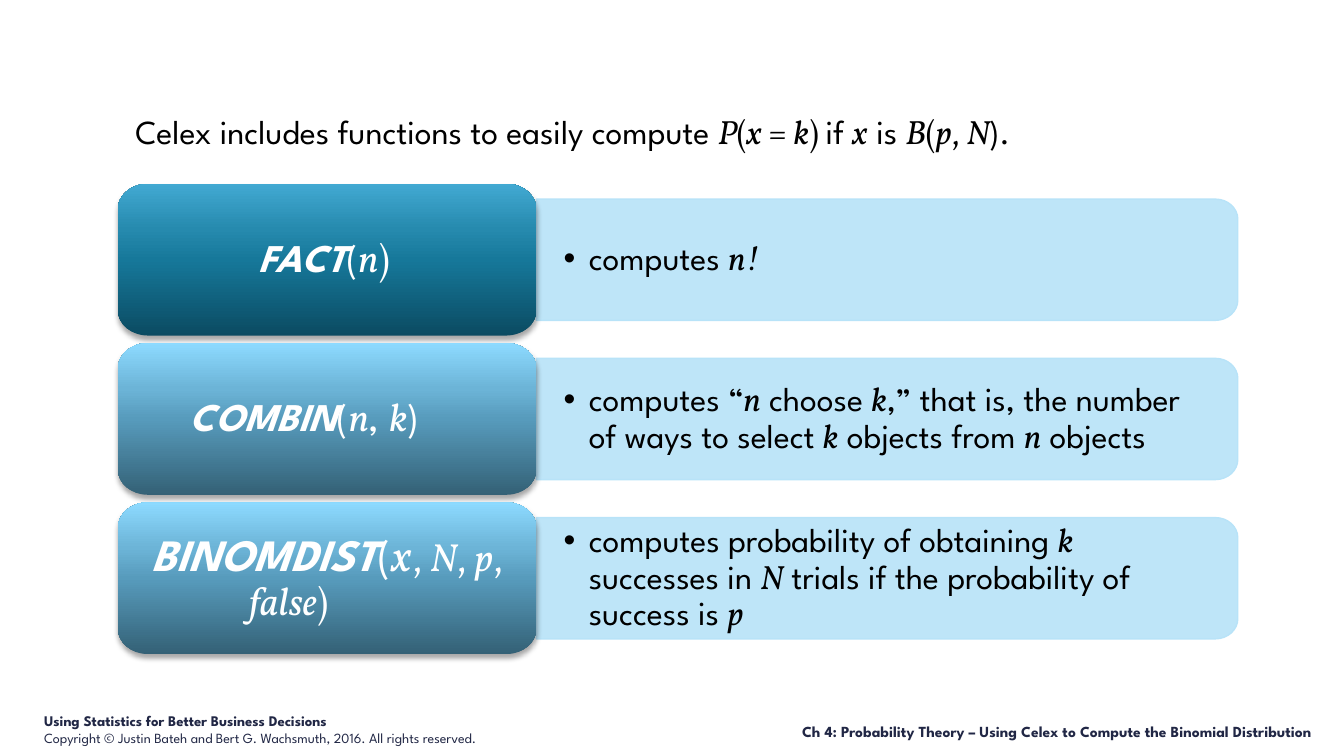
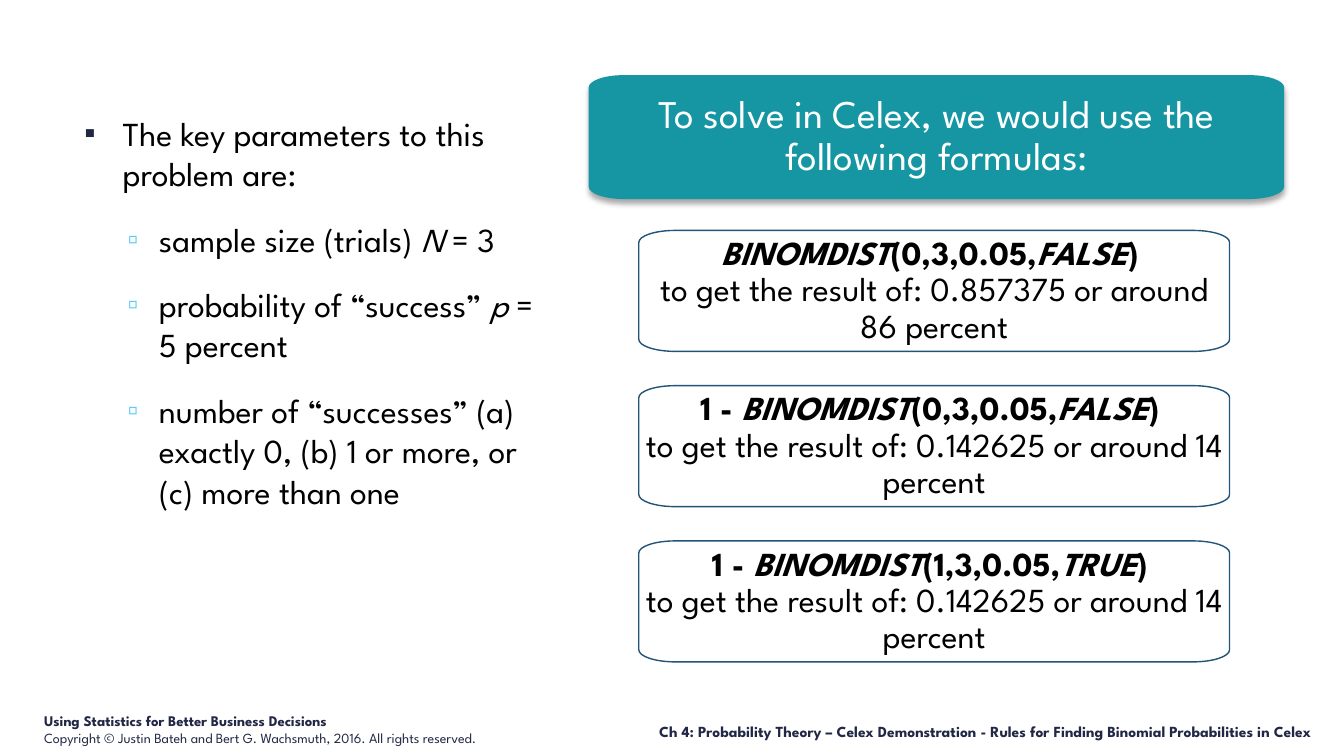
"""Build two slides on computing binomial probabilities with spreadsheet functions."""
from lxml import etree
from pptx import Presentation
from pptx.dml.color import RGBColor
from pptx.enum.text import MSO_ANCHOR, PP_ALIGN
from pptx.oxml.ns import qn
from pptx.util import Pt

LEFT, CENTER, RIGHT = PP_ALIGN.LEFT, PP_ALIGN.CENTER, PP_ALIGN.RIGHT
TOP, MIDDLE, BOTTOM = MSO_ANCHOR.TOP, MSO_ANCHOR.MIDDLE, MSO_ANCHOR.BOTTOM


class Theme:
    """Colours, fonts and type sizes."""
    sans, serif, bullets = "League Spartan", "Vollkorn", "Arial"
    ink, white, navy, sky = "000000", "FFFFFF", "212745", "5ECCF3"
    teal, outline = "1696A3", "225479"
    panel, panel_line = "BEE5F8", "B8E3F8"
    deep = [(0, "0B4B62"), (50, "16789A"), (70, "268AAE"), (100, "42A9D2")]
    light = [(0, "346176"), (50, "579BBC"), (70, "6CB4D7"), (100, "8DDAFF")]
    body, label, large = 24, 28, 32
    book, copyright, chapter = 10.5, 10, 11


# Run flags: b bold, i italic, v serif, + large
BOOK = [("Using Statistics for Better Business Decisions", "b")]
COPYRIGHT = [("Copyright\u00a0©\u00a0Justin Bateh and Bert G. Wachsmuth, 2016.\u00a0All\u00a0rights\u00a0reserved.", "")]
CHAPTERS = [
    ("Ch 4: Probability Theory – Using Celex to Compute the Binomial Distribution", 450),
    ("Ch 4: Probability Theory – Celex Demonstration - Rules for Finding Binomial Probabilities in Celex", 420.5),
]
INTRO = [("Celex includes functions to easily compute ", ""), ("P", "vi"), ("(", "v"), ("x ", "vi"),
         ("= ", "v"), ("k", "vi"), (") ", "v"), ("if ", ""), ("x", "vi"), (" is ", ""), ("B", "vi"),
         ("(", "v"), ("p", "vi"), (", ", "v"), ("N", "vi"), (").", "")]
FUNCTIONS = [
    (Theme.deep, 98,
     [("FACT", "bi"), ("(", ""), ("n", "vi"), (")\t", "v")],
     [("computes ", ""), ("n!", "vi")]),
    (Theme.light, 98,
     [("COMBIN", "bi"), ("(", ""), ("n", "vi"), (", ", ""), ("k", "vi"), (")\t", "")],
     [("computes “", ""), ("n", "vi"), (" choose ", ""), ("k", "vi"),
      (",” that is, the number of ways to select ", ""), ("k", "vi"),
      (" objects from ", ""), ("n", "vi"), (" objects", "")]),
    (Theme.light, 112,
     [("BINOMDIST", "bi+"), ("(", "+"), ("x", "vi+"), (", ", "v"), ("N", "vi"), (", ", "v"),
      ("p", "vi"), (", ", "v"), ("false", "vi"), (")\t", "v")],
     [("computes probability of obtaining ", ""), ("k", "vi"), (" successes in ", ""), ("N", "vi"),
      (" trials if the probability of success is ", ""), ("p", "vi")]),
]
PARAMETERS = [
    (0, [("The key parameters to this problem are:", "")]),
    (1, [("sample size (trials) ", ""), ("N ", "i"), ("= 3", "")]),
    (1, [("probability of “success” ", ""), ("p ", "i"), ("= 5 percent", "")]),
    (1, [("number of “successes” (a) exactly 0, (b) 1 or more, or (c) more than one", "")]),
]
LEVELS = [
    dict(indent=(32.4, -27.4), bullet=("▪", Theme.navy, 95)),
    dict(indent=(58.3, -22.3), bullet=("▫", Theme.sky, 90)),
]
BANNER = [("To solve in Celex, we would use the following formulas:", "")]
FORMULAS = [
    ("", "(0,3,0.05,", "FALSE", "0.857375 or around 86 percent"),
    ("1 - ", "(0,3,0.05,", "FALSE", "0.142625 or around 14 percent"),
    ("1 - ", "(1,3,0.05,", "TRUE", "0.142625 or around 14 percent"),
]


def rgb(color):
    """Turn a hex string into a colour."""
    return RGBColor.from_string(color)


def child(parent, tag, **attrs):
    """Append a drawing element."""
    el = etree.SubElement(parent, qn("a:" + tag))
    for name, value in attrs.items():
        el.set(name, str(value))
    return el


def set_frame(shape, insets, anchor):
    """Prepare a shape's text frame."""
    tf = shape.text_frame
    tf.word_wrap = True
    tf.vertical_anchor = anchor
    tf.margin_left, tf.margin_top, tf.margin_right, tf.margin_bottom = map(Pt, insets)
    return tf


def add_text(tf, runs, size, color=Theme.ink, align=LEFT, first=True, level=0,
             indent=None, spacing=None, before=0, after=0, bullet=None, tab=None):
    """Write one paragraph run by run."""
    p = tf.paragraphs[0] if first else tf.add_paragraph()
    p.alignment, p.level = align, level
    p.space_before, p.space_after = Pt(before), Pt(after)
    if spacing:
        p.line_spacing = spacing
    pPr = p._p.get_or_add_pPr()
    if indent:
        pPr.set("marL", str(Pt(indent[0])))
        pPr.set("indent", str(Pt(indent[1])))
    if tab:
        pPr.set("defTabSz", str(Pt(tab)))
    if bullet:
        char, tint, percent = bullet
        child(child(pPr, "buClr"), "srgbClr", val=tint)
        child(pPr, "buSzPct", val=percent * 1000)
        child(pPr, "buFont", typeface=Theme.bullets)
        child(pPr, "buChar", char=char)
    for text, flags in runs:
        r = p.add_run()
        r.text = text
        r.font.name = Theme.serif if "v" in flags else Theme.sans
        r.font.size = Pt(Theme.large if "+" in flags else size)
        r.font.bold, r.font.italic = "b" in flags, "i" in flags
        r.font.color.rgb = rgb(color)


def add_box(s, x, y, w, h, anchor=TOP):
    """Add a text box and return its frame."""
    return set_frame(s.shapes.add_textbox(Pt(x), Pt(y), Pt(w), Pt(h)), (7.2, 3.6, 7.2, 3.6), anchor)


def add_card(s, x, y, w, h, rx, ry, insets, fill, line=None, shadow=False, square_left=False):
    """Draw a card with elliptical corners and return its text frame."""
    outline, curves = [], {}
    for cx, cy, dx, dy in [(w, 0, -1, 1), (w, h, -1, -1), (0, h, 1, -1), (0, 0, 1, 1)]:
        if square_left and cx == 0:
            outline.append((cx, cy))
            continue
        ends = [(cx + dx * rx, cy), (cx, cy + dy * ry)]
        if dx != dy:
            a, b = ends
        else:
            b, a = ends
        curves[len(outline) + 1] = [(px + 0.55 * (cx - px), py + 0.55 * (cy - py)) for px, py in (a, b)]
        outline += [a, b]
    points = [(Pt(x + px), Pt(y + py)) for px, py in outline]
    builder = s.shapes.build_freeform(*points[0])
    builder.add_line_segments(points[1:], close=True)
    card = builder.convert_to_shape()
    card.shadow.inherit = False
    spPr = card._element.spPr
    segments = list(next(spPr.iter(qn("a:pathLst")))[0])
    for i, controls in curves.items():
        segments[i].tag = qn("a:cubicBezTo")
        for j, (px, py) in enumerate(controls):
            segments[i].insert(j, child(segments[i], "pt", x=Pt(px), y=Pt(py)))
    if isinstance(fill, list):
        card.fill.gradient()
        card.fill.gradient_angle = 90
        stops = spPr.find(qn("a:gradFill")).find(qn("a:gsLst"))
        for stop in list(stops):
            stops.remove(stop)
        for pos, color in fill:
            child(child(stops, "gs", pos=pos * 1000), "srgbClr", val=color)
    else:
        card.fill.solid()
        card.fill.fore_color.rgb = rgb(fill)
    if line:
        card.line.color.rgb = rgb(line)
        card.line.width = Pt(1)
    else:
        card.line.fill.background()
    if shadow:
        outer = child(spPr.find(qn("a:effectLst")), "outerShdw", blurRad=Pt(4), dist=Pt(3),
                      dir=5400000, rotWithShape=0)
        child(child(outer, "srgbClr", val=Theme.ink), "alpha", val=35000)
    return set_frame(card, insets, MIDDLE)


def add_slide(prs, chapter, left):
    """Add a blank slide with both footers."""
    s = prs.slides.add_slide(prs.slide_layouts[6])
    tf = add_box(s, 24.5, 504.8, 380, 29)
    add_text(tf, BOOK, Theme.book, Theme.navy)
    add_text(tf, COPYRIGHT, Theme.copyright, Theme.navy, first=False, after=1)
    tf = add_box(s, left, 512, 944.6 - left, 20.6, BOTTOM)
    add_text(tf, [(chapter, "b")], Theme.chapter, Theme.navy, RIGHT)
    return s


def build_functions(s):
    """Show each function beside what it computes."""
    add_text(add_box(s, 84.2, 75.6, 808.6, 50.4), INTRO, Theme.body, indent=(5.4, 0), before=7)
    x, y, w, h, pitch = 84.2, 131.3, 299, 108.4, 113.76
    panel_h = 86.6
    for i, (gradient, tab, name, meaning) in enumerate(FUNCTIONS):
        top = y + i * pitch
        tf = add_card(s, x + w, top + (h - panel_h) / 2, 501, panel_h, 16, 14.4, (19.4, 15.1, 24.5, 15.1),
                      Theme.panel, Theme.panel_line, square_left=True)
        add_text(tf, meaning, Theme.body, level=1, indent=(18, -18), spacing=0.9,
                 bullet=("•", Theme.ink, 100))
        tf = add_card(s, x, top, w, h, 21.6, 18.2, (15.8, 10.8, 15.8, 10.8), gradient, shadow=True)
        add_text(tf, name, Theme.label, Theme.white, CENTER, spacing=0.9, tab=tab)


def build_formulas(s):
    """List the parameters and the formulas that use them."""
    tf = add_box(s, 48.2, 77, 357, 396)
    for i, (level, runs) in enumerate(PARAMETERS):
        add_text(tf, runs, Theme.body, first=i == 0, level=level, before=6, after=12, **LEVELS[level])
    tf = add_card(s, 420.5, 53.7, 496.8, 88.5, 25, 8.8, (5, 4.3, 5, 4.3), Theme.teal, shadow=True)
    add_text(tf, BANNER, Theme.label, Theme.white, CENTER, spacing=0.9)
    for i, (prefix, values, flag, result) in enumerate(FORMULAS):
        tf = add_card(s, 456.3, 164.6 + i * 110.9, 422, 86.4, 26, 8.6, (4.3, 3.6, 4.3, 3.6),
                      Theme.white, Theme.outline)
        formula = [(prefix, "b"), ("BINOMDIST", "bi"), (values, "b"), (flag, "bi"), (") ", "b")]
        add_text(tf, [run for run in formula if run[0]], Theme.body, align=CENTER, spacing=0.9)
        add_text(tf, [("to get the result of: " + result, "")], Theme.body, align=CENTER,
                 first=False, spacing=0.9)


def main():
    """Build and save the slides."""
    prs = Presentation()
    prs.slide_width, prs.slide_height = Pt(960), Pt(540)
    for build, (chapter, left) in zip((build_functions, build_formulas), CHAPTERS):
        build(add_slide(prs, chapter, left))
    prs.save("out.pptx")


if __name__ == "__main__":
    main()
